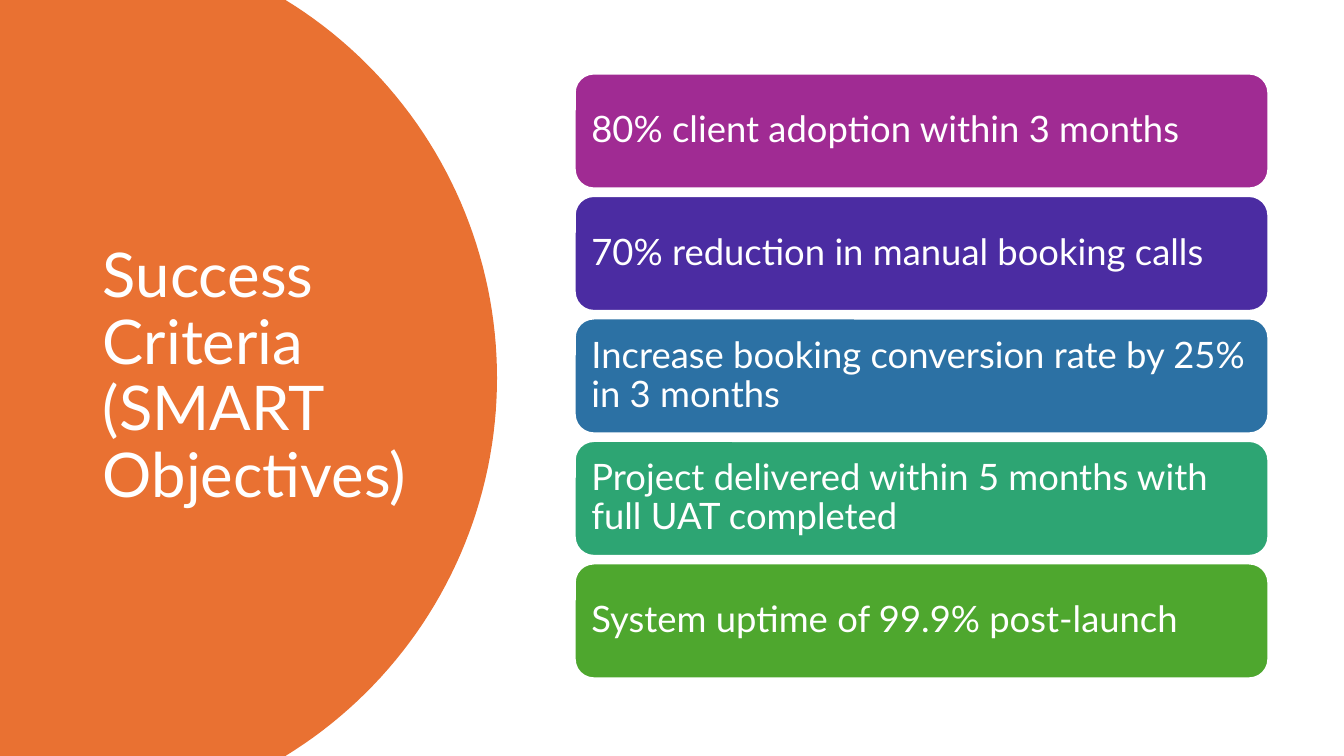
from dataclasses import dataclass
from math import acos, cos, pi, sin

from pptx import Presentation
from pptx.dml.color import RGBColor
from pptx.enum.shapes import MSO_SHAPE as SHAPE
from pptx.enum.text import MSO_ANCHOR as ANCHOR, MSO_AUTO_SIZE as AUTOSIZE, PP_ALIGN as ALIGN
from pptx.util import Inches, Pt


@dataclass(frozen=True)
class Theme:
    """Colours, font and type sizes of the slide."""
    font: str = "Lato"
    title_size: int = 44
    body_size: int = 26
    white: str = "FFFFFF"
    panel: str = "E97132"
    bars: tuple = ("A02B93", "4B2CA2", "2C71A4", "2DA573", "4EA72E")


THEME = Theme()
TITLE = "Success Criteria (SMART Objectives)"
CRITERIA = (
    "80% client adoption within 3 months",
    "70% reduction in manual booking calls",
    "Increase booking conversion rate by 25% in 3 months",
    "Project delivered within 5 months with full UAT completed",
    "System uptime of 99.9% post-launch",
)


def set_attrs(obj, values):
    """Set each named attribute of an object."""
    for name, value in values.items():
        setattr(obj, name, value)


def paint(sp, color):
    """Give a shape a flat fill without shadow."""
    sp.shadow.inherit = False
    sp.fill.solid()
    sp.fill.fore_color.rgb = RGBColor.from_string(color)


def write(sp, text, size, inset_x, inset_y):
    """Write white, left-aligned, vertically centred text in a shape."""
    tf = sp.text_frame
    set_attrs(tf, {
        "word_wrap": True, "auto_size": AUTOSIZE.NONE, "vertical_anchor": ANCHOR.MIDDLE,
        "margin_left": Inches(inset_x), "margin_right": Inches(inset_x),
        "margin_top": Inches(inset_y), "margin_bottom": Inches(inset_y),
    })
    p = tf.paragraphs[0]
    set_attrs(p, {"alignment": ALIGN.LEFT, "line_spacing": 0.9})
    r = p.add_run()
    r.text = text
    set_attrs(r.font, {"name": THEME.font, "size": Pt(size)})
    r.font.color.rgb = RGBColor.from_string(THEME.white)


def add_title_panel(slide, x, y, w, h, radius=4.4, steps=80):
    """Draw the panel with its circular right edge and place the title on it."""
    cx, cy = x + w - radius, y + h / 2
    half = pi / 2 - acos(h / 2 / radius)
    angles = [half * (2 * i / steps - 1) for i in range(steps + 1)]
    arc = [(Inches(cx + radius * cos(a)), Inches(cy + radius * sin(a))) for a in angles]
    builder = slide.shapes.build_freeform(Inches(x), Inches(y))
    builder.add_line_segments(arc + [(Inches(x), Inches(y + h))], close=True)
    panel = builder.convert_to_shape()
    paint(panel, THEME.panel)
    panel.line.fill.background()

    title = slide.shapes.title
    title.element.addprevious(panel.element)
    set_attrs(title, {
        "left": Inches(x + 0.92), "top": Inches(y + 0.7),
        "width": Inches(3.23), "height": Inches(h - 1.41),
    })
    write(title, TITLE, THEME.title_size, 0.1, 0.05)


def add_criteria(slide, x, y, w, h, gap=0.075):
    """Stack one rounded bar per criterion in the box."""
    group = slide.shapes.add_group_shape()
    bar_h = (h - gap * (len(CRITERIA) - 1)) / len(CRITERIA)
    for i, (text, color) in enumerate(zip(CRITERIA, THEME.bars)):
        sp = group.shapes.add_shape(
            SHAPE.ROUNDED_RECTANGLE,
            Inches(x), Inches(y + i * (bar_h + gap)), Inches(w), Inches(bar_h))
        paint(sp, color)
        sp.line.color.rgb = RGBColor.from_string(THEME.white)
        sp.line.width = Pt(1.5)
        write(sp, text, THEME.body_size, 0.11, 0.11)


def main():
    """Build and save the slide."""
    prs = Presentation()
    set_attrs(prs, {"slide_width": Inches(13.33), "slide_height": Inches(7.5)})
    slide = prs.slides.add_slide(prs.slide_layouts[5])
    add_title_panel(slide, 0, 0, 4.93, 7.5)
    add_criteria(slide, 5.7, 0.73, 6.88, 6)
    prs.save("out.pptx")


if __name__ == "__main__":
    main()
